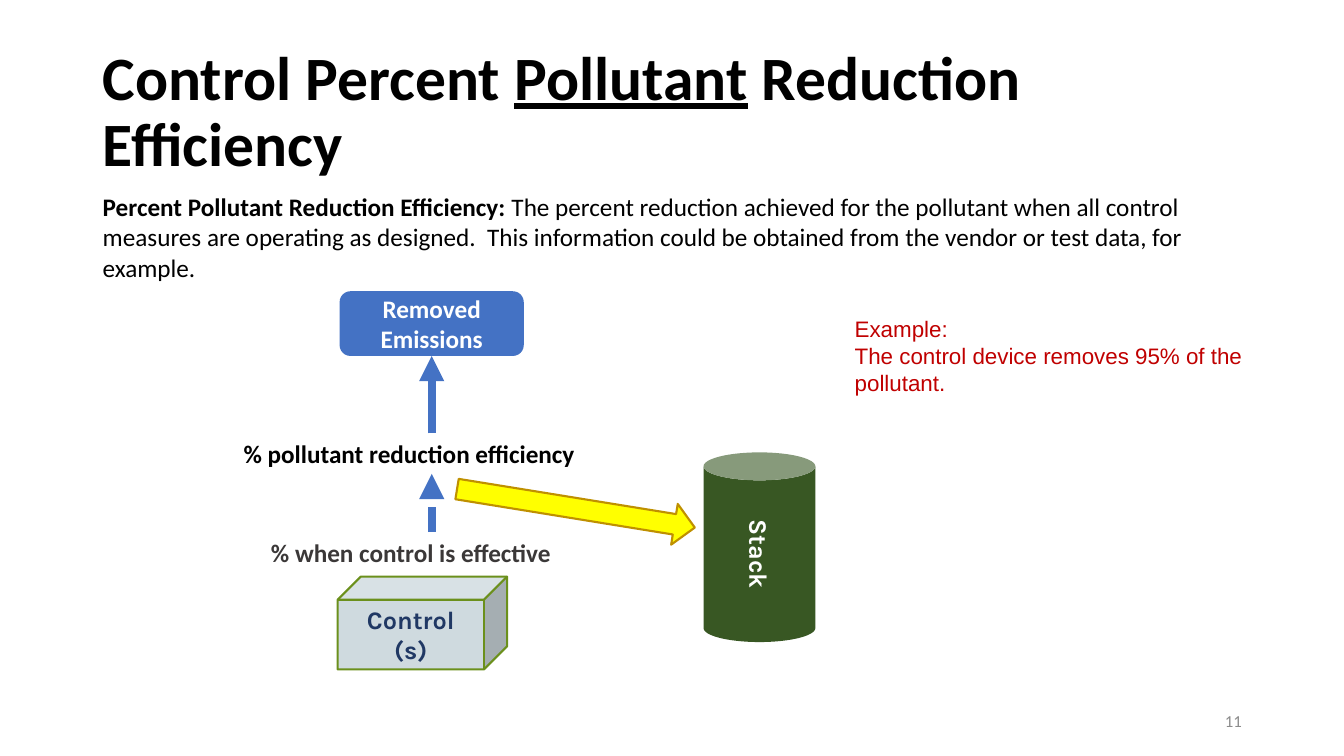
from dataclasses import dataclass, field
from typing import Any

from lxml import etree
from pptx import Presentation
from pptx.dml.color import RGBColor
from pptx.enum.dml import MSO_LINE
from pptx.enum.shapes import MSO_CONNECTOR, MSO_SHAPE
from pptx.enum.text import MSO_ANCHOR, MSO_AUTO_SIZE, PP_ALIGN
from pptx.oxml.ns import qn
from pptx.util import Cm, Pt

BLACK = RGBColor(0x00, 0x00, 0x00)
WHITE = RGBColor(0xFF, 0xFF, 0xFF)
GREY = RGBColor(0x8C, 0x8C, 0x8C)
CHARCOAL = RGBColor(0x3B, 0x38, 0x38)
RED = RGBColor(0xC0, 0x00, 0x00)
BLUE = RGBColor(0x44, 0x72, 0xC4)
NAVY = RGBColor(0x20, 0x38, 0x64)
PALE_BLUE = RGBColor(0xCF, 0xDA, 0xDF)
OLIVE = RGBColor(0x6B, 0x90, 0x1C)
DARK_GREEN = RGBColor(0x38, 0x57, 0x23)
YELLOW = RGBColor(0xFF, 0xFF, 0x00)
GOLD = RGBColor(0xBF, 0x90, 0x00)

LEFT, CENTER, RIGHT = PP_ALIGN.LEFT, PP_ALIGN.CENTER, PP_ALIGN.RIGHT
TOP, MIDDLE = MSO_ANCHOR.TOP, MSO_ANCHOR.MIDDLE
GROW = MSO_AUTO_SIZE.SHAPE_TO_FIT_TEXT
CUBE, CAN = MSO_SHAPE.CUBE, MSO_SHAPE.CAN
ROUNDED, RIGHT_ARROW = MSO_SHAPE.ROUNDED_RECTANGLE, MSO_SHAPE.RIGHT_ARROW
STRAIGHT, SQUARE_DOT = MSO_CONNECTOR.STRAIGHT, MSO_LINE.SQUARE_DOT
TOP_SITE, BOTTOM_SITE = 0, 2

Box = tuple[float, float, float, float]
Run = tuple[str, dict[str, Any]]


@dataclass
class TextStyle:
    size: float = 18
    color: RGBColor = BLACK
    font: str = "Calibri"
    bold: bool = False
    align: PP_ALIGN = LEFT
    anchor: MSO_ANCHOR = TOP
    line_spacing: float | None = None


@dataclass
class TextBlock:
    box: Box
    paragraphs: list[list[Run]]
    style: TextStyle = field(default_factory=TextStyle)
    grows: bool = True


@dataclass
class Block:
    kind: MSO_SHAPE
    box: Box
    fill: RGBColor
    outline: RGBColor | None = None
    label: str = ""
    style: TextStyle = field(default_factory=TextStyle)
    rotation: float = 0
    vertical: bool = False


def write_text(frame, paragraphs: list[list[Run]], style: TextStyle) -> None:
    frame.word_wrap = True
    frame.vertical_anchor = style.anchor
    for index, runs in enumerate(paragraphs):
        paragraph = frame.add_paragraph() if index else frame.paragraphs[0]
        paragraph.alignment = style.align
        paragraph.line_spacing = style.line_spacing
        for text, changes in runs:
            run = paragraph.add_run()
            run.text = text
            font_format = {"name": style.font, "size": Pt(style.size), "bold": style.bold}
            for attribute, value in (font_format | changes).items():
                setattr(run.font, attribute, value)
            run.font.color.rgb = style.color


def add_text(slide, block: TextBlock):
    shape = slide.shapes.add_textbox(*map(Cm, block.box))
    write_text(shape.text_frame, block.paragraphs, block.style)
    if block.grows:
        shape.text_frame.auto_size = GROW
    return shape


def add_block(slide, block: Block):
    shape = slide.shapes.add_shape(block.kind, *map(Cm, block.box))
    shape.shadow.inherit = False
    shape.rotation = block.rotation
    shape.fill.solid()
    shape.fill.fore_color.rgb = block.fill
    if block.outline is None:
        shape.line.fill.background()
    else:
        shape.line.color.rgb = block.outline
        shape.line.width = Pt(1.5)
    if block.label:
        write_text(shape.text_frame, [[(block.label, {})]], block.style)
    if block.vertical:
        shape.text_frame._txBody.bodyPr.set("vert", "vert")
    return shape


def add_upward_arrow(slide, lower, upper, dash: MSO_LINE | None = None) -> None:
    """Join the top of the lower shape to the bottom of the upper one."""
    arrow = slide.shapes.add_connector(STRAIGHT, 0, 0, 0, 0)
    arrow.begin_connect(lower, TOP_SITE)
    arrow.end_connect(upper, BOTTOM_SITE)
    arrow.line.color.rgb = BLUE
    arrow.line.width = Pt(6)
    if dash is not None:
        arrow.line.dash_style = dash
    properties = arrow._element.spPr
    etree.SubElement(properties.find(qn("a:ln")), qn("a:tailEnd"), type="triangle")
    etree.SubElement(properties, qn("a:effectLst"))


PAGE_NUMBER = TextBlock(
    (23.93, 17.65, 7.62, 1.02), [[("11", {})]],
    TextStyle(12, GREY, align=RIGHT, anchor=MIDDLE), grows=False)
TITLE = TextBlock(
    (2.34, 1.02, 29.21, 3.68),
    [[("Control Percent ", {}), ("Pollutant", {"underline": True}),
      (" Reduction Efficiency", {})]],
    TextStyle(44, bold=True, anchor=MIDDLE, line_spacing=0.9), grows=False)
DEFINITION = TextBlock(
    (2.34, 4.7, 29.9, 2.57),
    [[("Percent Pollutant Reduction Efficiency: ", {"bold": True}),
      ("The percent reduction achieved for the pollutant when all control measures are "
       "operating as designed.  This information could be obtained from the vendor or "
       "test data, for example.", {})]])
EXAMPLE = TextBlock(
    (21.29, 7.82, 10.77, 2.31),
    [[("Example:", {})], [("The control device removes 95% of the pollutant.", {})]],
    TextStyle(16, RED, "Arial"))
EFFECTIVE = TextBlock(
    (6.58, 13.41, 8.6, 1.02), [[("% when control is effective", {})]],
    TextStyle(color=CHARCOAL, bold=True))
REDUCTION = TextBlock(
    (5.89, 10.92, 9.98, 1.02), [[("% pollutant reduction efficiency", {})]],
    TextStyle(bold=True))

CONTROLS = Block(
    CUBE, (8.51, 14.53, 4.27, 2.34), PALE_BLUE, OLIVE, "Control (s)",
    TextStyle(color=NAVY, font="Karla", bold=True, align=CENTER, anchor=MIDDLE))
REMOVED = Block(
    ROUNDED, (8.56, 7.34, 4.64, 1.63), BLUE, label="Removed Emissions",
    style=TextStyle(color=WHITE, bold=True, align=CENTER, anchor=MIDDLE))
STACK = Block(
    CAN, (17.73, 11.4, 2.82, 4.78), DARK_GREEN, label="Stack", vertical=True,
    style=TextStyle(color=WHITE, font="Karla", bold=True, align=CENTER, anchor=MIDDLE))
TO_STACK = Block(RIGHT_ARROW, (11.48, 12.29, 6.07, 1.04), YELLOW, GOLD, rotation=9.2)


def main() -> None:
    presentation = Presentation()
    presentation.slide_width, presentation.slide_height = Cm(33.87), Cm(19.05)
    slide = presentation.slides.add_slide(presentation.slide_layouts[6])

    for text_block in (PAGE_NUMBER, TITLE, DEFINITION, EXAMPLE):
        add_text(slide, text_block)
    for block in (CONTROLS, STACK, TO_STACK):
        add_block(slide, block)

    removed = add_block(slide, REMOVED)
    effective = add_text(slide, EFFECTIVE)
    reduction = add_text(slide, REDUCTION)
    add_upward_arrow(slide, effective, reduction, SQUARE_DOT)
    add_upward_arrow(slide, reduction, removed)

    presentation.save("out.pptx")


if __name__ == "__main__":
    main()
